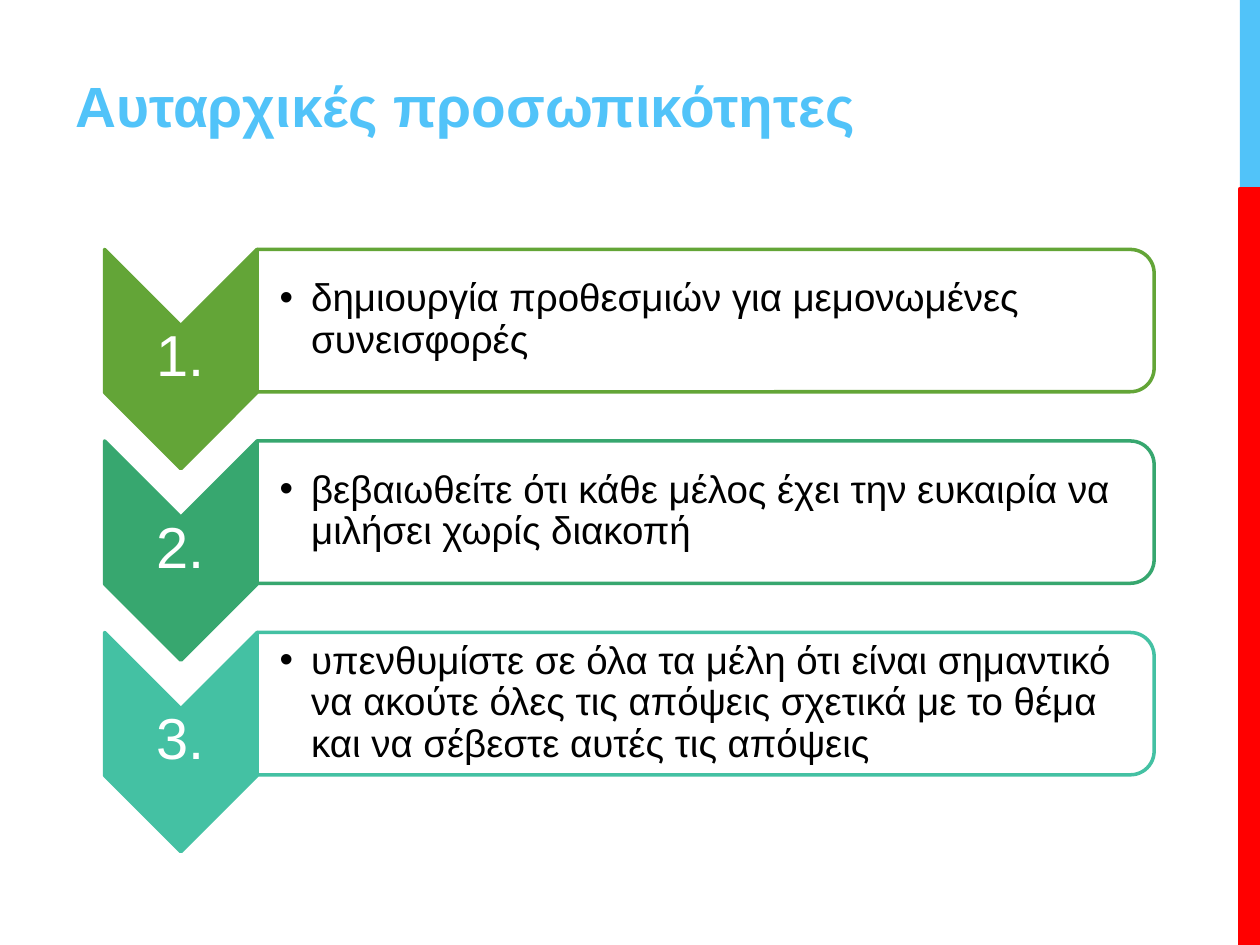
"""Build the slide on authoritarian personalities: three numbered chevron steps."""
from lxml.etree import SubElement
from pptx import Presentation
from pptx.dml.color import RGBColor
from pptx.enum.shapes import MSO_SHAPE
from pptx.enum.text import MSO_ANCHOR, PP_ALIGN
from pptx.oxml.ns import qn
from pptx.util import Inches, Pt

TITLE = "Αυταρχικές προσωπικότητες"
STEPS = [
    ("1.", "δημιουργία προθεσμιών για μεμονωμένες συνεισφορές", "green"),
    ("2.", "βεβαιωθείτε ότι κάθε μέλος έχει την ευκαιρία να μιλήσει χωρίς διακοπή", "jade"),
    ("3.", "υπενθυμίστε σε όλα τα μέλη ότι είναι σημαντικό να ακούτε όλες τις απόψεις "
           "σχετικά με το θέμα και να σέβεστε αυτές τις απόψεις", "teal"),
]
COLORS = {"sky": "51C3F9", "red": "FF0000", "green": "63A537", "jade": "37A76F",
          "teal": "44C1A3", "white": "FFFFFF", "black": "000000"}
FONT = "Arial"
STEP_TOP, STEP_PITCH = 1.98, 1.52
CHEVRON_LEFT, CHEVRON_WIDTH, CHEVRON_HEIGHT = 0.83, 1.21, 1.74
PANEL_LEFT, PANEL_WIDTH, PANEL_HEIGHT = 2.04, 7.12, 1.13


def rgb(name):
    return RGBColor.from_string(COLORS[name])


def add_block(slide, kind, left, top, width, height, fill, line=None, weight=2):
    block = slide.shapes.add_shape(kind, *map(Inches, (left, top, width, height)))
    block.shadow.inherit = False
    block.fill.solid()
    block.fill.fore_color.rgb = rgb(fill)
    if line:
        block.line.color.rgb = rgb(line)
        block.line.width = Pt(weight)
    else:
        block.line.fill.background()
    return block


def add_turned(slide, kind, left, top, width, height, fill, line):
    shift = (width - height) / 2
    block = add_block(slide, kind, left + shift, top - shift, height, width, fill, line)
    block.rotation = 90
    return block


def add_text(slide, text, box, insets, size, color, anchor=MSO_ANCHOR.MIDDLE, bold=False):
    frame = slide.shapes.add_textbox(*map(Inches, box)).text_frame
    frame.word_wrap = True
    frame.vertical_anchor = anchor
    (frame.margin_left, frame.margin_top,
     frame.margin_right, frame.margin_bottom) = map(Inches, insets)
    paragraph = frame.paragraphs[0]
    run = paragraph.add_run()
    run.text = text
    run.font.name = FONT
    run.font.size = Pt(size)
    run.font.bold = bold
    run.font.color.rgb = rgb(color)
    return paragraph


def add_bullet(paragraph):
    properties = paragraph._p.get_or_add_pPr()
    properties.set("marL", str(Inches(0.25)))
    properties.set("indent", str(-Inches(0.25)))
    SubElement(properties, qn("a:buFont"), typeface=FONT)
    SubElement(properties, qn("a:buChar"), char="•")


def add_step(slide, top, number, advice, color):
    add_turned(slide, MSO_SHAPE.CHEVRON, CHEVRON_LEFT, top, CHEVRON_WIDTH,
               CHEVRON_HEIGHT, color, color)
    label = add_text(slide, number, (CHEVRON_LEFT, top + 0.6, CHEVRON_WIDTH, 0.52),
                     (0.02,) * 4, 33, "white")
    label.alignment = PP_ALIGN.CENTER
    label.line_spacing = 0.9

    panel = add_turned(slide, MSO_SHAPE.ROUND_2_SAME_RECTANGLE, PANEL_LEFT, top,
                       PANEL_WIDTH, PANEL_HEIGHT, "white", color)
    SubElement(panel.fill._xPr.find(qn("a:solidFill"))[0], qn("a:alpha"), val="90000")
    body = add_text(slide, advice, (PANEL_LEFT + 0.01, top + 0.05, 7.06, 1.02),
                    (0.17, 0.02, 0.02, 0.02), 22, "black")
    add_bullet(body)
    body.line_spacing = 0.9


def main():
    deck = Presentation()
    deck.slide_width, deck.slide_height = Inches(10), Inches(7.5)
    slide = deck.slides.add_slide(deck.slide_layouts[6])
    add_block(slide, MSO_SHAPE.RECTANGLE, 9.84, 0, 0.16, 1.5, "sky")
    add_block(slide, MSO_SHAPE.RECTANGLE, 9.84, 1.5, 0.16, 6, "red", "red", 2.25)
    add_text(slide, TITLE, (0.5, 0.17, 7.02, 1.5), (0.1, 0.05, 0.1, 0.57), 32.4, "sky",
             MSO_ANCHOR.BOTTOM, True)
    for index, step in enumerate(STEPS):
        add_step(slide, STEP_TOP + index * STEP_PITCH, *step)
    deck.save("out.pptx")


if __name__ == "__main__":
    main()
